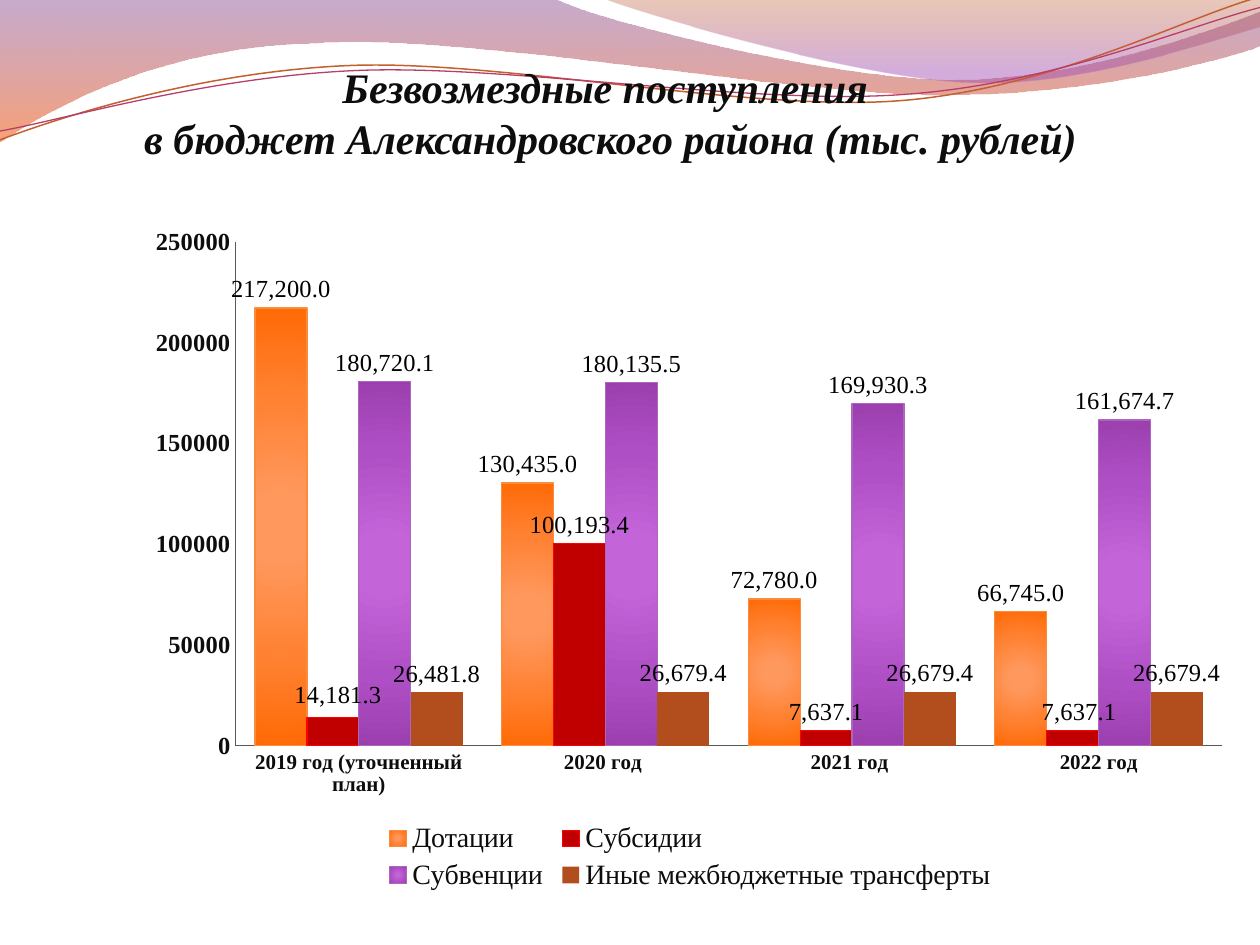
from dataclasses import dataclass
from math import cos, radians, sin
from typing import Optional

from lxml.etree import SubElement
from pptx import Presentation
from pptx.chart.data import CategoryChartData
from pptx.dml.color import RGBColor
from pptx.enum.chart import XL_CHART_TYPE as ChartType
from pptx.enum.chart import XL_LABEL_POSITION as LabelPosition
from pptx.enum.chart import XL_LEGEND_POSITION as LegendPosition
from pptx.enum.chart import XL_TICK_MARK as TickMark
from pptx.enum.text import MSO_ANCHOR, MSO_AUTO_SIZE, PP_ALIGN
from pptx.oxml.ns import qn
from pptx.util import Inches, Pt

FONT = "Times New Roman"
LABEL_FORMAT = "#,##0.0"
CHART_WIDTH, CHART_HEIGHT = 8.82, 5.43
TILT = 2.7
BLACK = RGBColor(0x00, 0x00, 0x00)
INK = RGBColor(0x0D, 0x0D, 0x0D)
AXIS = RGBColor(0x59, 0x59, 0x59)
PURPLE = RGBColor(0x83, 0x45, 0x91)
ORANGE = RGBColor(0xF3, 0x53, 0x07)
BROWN = RGBColor(0xB7, 0x49, 0x15)
VIOLET = RGBColor(0xA1, 0x4B, 0xB4)
RUST = RGBColor(0xC4, 0x5F, 0x30)
ROSE = RGBColor(0xB8, 0x3D, 0x68)
CRIMSON = RGBColor(0xC0, 0x00, 0x00)
RED = RGBColor(0xFF, 0x00, 0x00)
SIENNA = RGBColor(0xB2, 0x4D, 0x1D)
ORANGE_EDGE = RGBColor(0xFA, 0x8D, 0x3D)
VIOLET_EDGE = RGBColor(0xAC, 0x66, 0xBB)


@dataclass
class Stop:
    position: int
    color: RGBColor
    opacity: int = 100


@dataclass
class Wave:
    start: tuple
    segments: list
    stops: Optional[list] = None
    line: Optional[RGBColor] = None
    width: float = 0
    pivot: Optional[tuple] = None


@dataclass
class Income:
    name: str
    values: list
    fill: object
    edge: Optional[RGBColor] = None


def glow(*colors: str) -> list:
    return [Stop(at, RGBColor.from_string(color))
            for at, color in zip((0, 15, 62, 97, 100), colors)]


WAVES = [
    Wave((0, 0), [
        (4.4, -0.01), (4.76, 0.17, 6.64, 0.63, 7.58, 0.63),
        (8.53, 0.63, 9.58, 0.26, 10, 0.09), (10.01, 0.36),
        (9.83, 0.44, 8.7, 0.76, 7.46, 0.75),
        (6.22, 0.75, 3.82, 0.28, 2.57, 0.34),
        (1.29, 0.36, 0.46, 0.83, -0.01, 1.13), (0, 0)],
        stops=[Stop(0, PURPLE, 45), Stop(100, ORANGE, 55)]),
    Wave((4.79, -0.01), [
        (5.09, 0.11, 6.82, 0.62, 7.69, 0.65),
        (8.56, 0.69, 9.61, 0.32, 10, 0.21), (10, 0), (4.79, -0.01)],
        stops=[Stop(0, BROWN, 30), Stop(80, VIOLET, 45)]),
    Wave((0, 1.11), [
        (0.48, 0.93, 1.58, 0.57, 2.77, 0.52),
        (3.95, 0.47, 5.93, 0.89, 7.13, 0.8),
        (8.33, 0.71, 9.38, 0.15, 9.98, -0.02)],
        line=RUST, width=0.85, pivot=(4.99, 0.58)),
    Wave((0, 1.04), [
        (0.47, 0.96, 1.64, 0.61, 2.83, 0.56),
        (4.03, 0.51, 5.97, 0.84, 7.17, 0.75),
        (8.36, 0.67, 9.41, 0.21, 10, 0.06)],
        line=ROSE, width=0.75, pivot=(5, 0.59)),
]

YEARS = ["2019 год (уточненный план)", "2020 год ", "2021 год ", "2022 год"]
INCOMES = [
    Income("Дотации", [217200, 130435, 72780, 66745],
           glow("FF995F", "FF985D", "FF802F", "FF6C09", "FD6B00"), ORANGE_EDGE),
    Income("Субсидии", [14181.3, 100193.4, 7637.1, 7637.1], CRIMSON, RED),
    Income("Субвенции", [180720.1, 180135.5, 169930.3, 161674.7],
           glow("C464DA", "C364D9", "AF4FC5", "9D41B1", "9B3BB0"), VIOLET_EDGE),
    Income("Иные межбюджетные трансферты",
           [26481.8, 26679.4, 26679.4, 26679.4], SIENNA),
]


def set_gradient(fill, properties, stops: list, radial: bool) -> None:
    fill.gradient()
    gradient = properties.find(qn("a:gradFill"))
    for child in list(gradient):
        gradient.remove(child)
    listing = SubElement(gradient, qn("a:gsLst"))
    for stop in stops:
        mark = SubElement(listing, qn("a:gs"), pos=str(stop.position * 1000))
        color = SubElement(mark, qn("a:srgbClr"), val=str(stop.color))
        if stop.opacity < 100:
            SubElement(color, qn("a:alpha"), val=str(stop.opacity * 1000))
    if radial:
        circle = SubElement(gradient, qn("a:path"), path="circle")
        SubElement(circle, qn("a:fillToRect"), l="50000", t="50000", r="50000", b="50000")
    else:
        SubElement(gradient, qn("a:lin"), ang="5400000", scaled="0")


def place_point(x: float, y: float, pivot: Optional[tuple]) -> tuple:
    if pivot:
        dx, dy = x - pivot[0], y - pivot[1]
        turn = radians(TILT)
        x = pivot[0] + dx * cos(turn) - dy * sin(turn)
        y = pivot[1] + dx * sin(turn) + dy * cos(turn)
    return Inches(x), Inches(y)


def bend(shape, segments: list) -> None:
    steps = iter(list(shape.element.iter(qn("a:lnTo"))))
    for segment in segments:
        first = next(steps)
        if len(segment) == 6:
            curve = first.makeelement(qn("a:cubicBezTo"))
            first.addprevious(curve)
            for step in (first, next(steps), next(steps)):
                curve.append(step[0])
                step.getparent().remove(step)


def draw_wave(page, wave: Wave) -> None:
    points = [place_point(*segment[i:i + 2], wave.pivot)
              for segment in wave.segments for i in range(0, len(segment), 2)]
    builder = page.shapes.build_freeform(*place_point(*wave.start, wave.pivot))
    builder.add_line_segments(points, close=wave.stops is not None)
    shape = builder.convert_to_shape()
    bend(shape, wave.segments)
    shape.shadow.inherit = False
    if wave.stops:
        set_gradient(shape.fill, shape.element.spPr, wave.stops, radial=False)
        shape.line.fill.background()
    else:
        shape.rotation = 360 - TILT
        shape.fill.background()
        shape.line.color.rgb = wave.line
        shape.line.width = Pt(wave.width)


def set_font(font, size: float, color: RGBColor, bold: bool = False) -> None:
    font.name, font.size, font.bold = FONT, Pt(size), bold
    font.color.rgb = color


def set_layout(element, index: int, modes: dict, x=0, y=0, **size: float) -> None:
    layout = element.find(qn("c:layout"))
    if layout is None:
        layout = element.makeelement(qn("c:layout"))
        element.insert(index, layout)
    manual = SubElement(layout, qn("c:manualLayout"))
    for name, value in modes.items():
        SubElement(manual, qn(f"c:{name}"), val=value)
    for side, value in dict(x=x, y=y, **size).items():
        whole = CHART_WIDTH if side in "xw" else CHART_HEIGHT
        SubElement(manual, qn(f"c:{side}"), val=str(value / whole))


def draw_title(page) -> None:
    title = page.shapes.title
    title.left, title.top = Inches(0.28), Inches(0.44)
    title.width, title.height = Inches(9.13), Inches(0.91)
    frame = title.text_frame
    frame.text = "Безвозмездные поступления \nв бюджет Александровского района (тыс. рублей)"
    frame.word_wrap = True
    frame.auto_size = MSO_AUTO_SIZE.SHAPE_TO_FIT_TEXT
    frame.vertical_anchor = MSO_ANCHOR.TOP
    for para in frame.paragraphs:
        para.alignment = PP_ALIGN.CENTER
        for span in para.runs:
            set_font(span.font, 24, INK, bold=True)
            span.font.italic = True
    page.shapes.element.append(title.element)


def style_axes(chart) -> None:
    for axis, size, layout in ((chart.category_axis, 12, "#,##0.00"), (chart.value_axis, 14, "0")):
        axis.has_major_gridlines = False
        axis.major_tick_mark = axis.minor_tick_mark = TickMark.NONE
        axis.format.line.color.rgb = AXIS
        axis.format.line.width = Pt(0.75)
        set_font(axis.tick_labels.font, size, INK, bold=True)
        axis.tick_labels.number_format = layout
        axis.tick_labels.number_format_is_linked = False


def nudge_label(series, index: int, x: float, y: float) -> None:
    label = series.points[index].data_label
    label.position = LabelPosition.OUTSIDE_END
    set_font(label.font, 14, BLACK)
    element = series.data_labels._element.findall(qn("c:dLbl"))[-1]
    set_layout(element, 1, {}, x=x, y=y)
    number = element.makeelement(qn("c:numFmt"), formatCode=LABEL_FORMAT, sourceLinked="0")
    element.insert(2, number)


def draw_chart(page) -> None:
    data = CategoryChartData()
    data.categories = YEARS
    for income in INCOMES:
        data.add_series(income.name, income.values)
    chart = page.shapes.add_chart(ChartType.COLUMN_CLUSTERED, Inches(1.06), Inches(1.7),
                                  Inches(CHART_WIDTH), Inches(CHART_HEIGHT), data).chart
    set_font(chart.font, 18, BLACK)
    chart.has_title = False
    style_axes(chart)
    plot = chart.plots[0]
    plot.gap_width, plot.overlap, plot.vary_by_categories = 75, 0, False
    for series, income in zip(plot.series, INCOMES):
        look = series.format
        if isinstance(income.fill, list):
            set_gradient(look.fill, series._element.get_or_add_spPr(), income.fill, radial=True)
        else:
            look.fill.solid()
            look.fill.fore_color.rgb = income.fill
        if income.edge:
            look.line.color.rgb = income.edge
            look.line.width = Pt(0.75)
        labels = series.data_labels
        labels.show_value = True
        labels.number_format, labels.number_format_is_linked = LABEL_FORMAT, False
        labels.position = LabelPosition.OUTSIDE_END
        set_font(labels.font, 14, BLACK)
    nudge_label(plot.series[1], 0, 0.04, -0.03)
    nudge_label(plot.series[1], 3, 0.05, 0)
    chart.has_legend = True
    legend = chart.legend
    legend.position, legend.include_in_layout = LegendPosition.BOTTOM, False
    set_font(legend.font, 16, INK)
    edges = {"xMode": "edge", "yMode": "edge"}
    set_layout(legend._element, 1, edges, x=1.95, y=4.79, w=4.93, h=0.62)
    set_layout(chart._chartSpace.chart.plotArea, 0, {"layoutTarget": "inner", **edges},
               x=0.81, y=0.22, w=7.83, h=4)


def main() -> None:
    deck = Presentation()
    deck.slide_width, deck.slide_height = Inches(10), Inches(7.5)
    page = deck.slides.add_slide(deck.slide_layouts[5])
    for wave in WAVES:
        draw_wave(page, wave)
    draw_title(page)
    draw_chart(page)
    deck.save("out.pptx")


if __name__ == "__main__":
    main()
